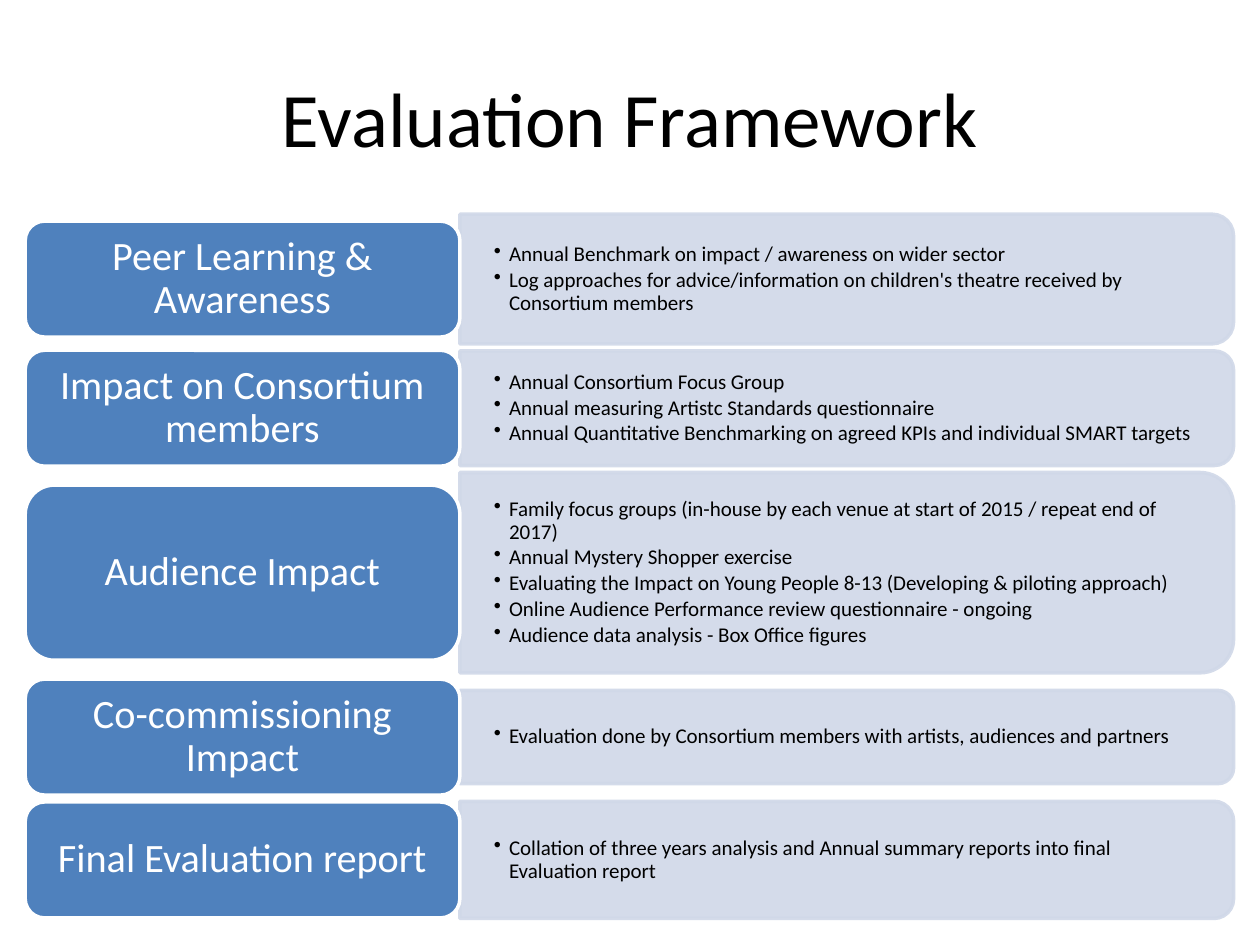
from dataclasses import dataclass

from lxml import etree
from pptx import Presentation
from pptx.dml.color import RGBColor
from pptx.enum.shapes import MSO_SHAPE
from pptx.enum.text import MSO_ANCHOR, PP_ALIGN
from pptx.oxml.ns import qn
from pptx.util import Emu, Pt

ROUND = MSO_SHAPE.ROUNDED_RECTANGLE
TAB = MSO_SHAPE.ROUND_2_SAME_RECTANGLE
CENTER, LEFT = PP_ALIGN.CENTER, PP_ALIGN.LEFT
MIDDLE = MSO_ANCHOR.MIDDLE
SCALE = 9144
INSET = 0.0488


@dataclass(frozen=True)
class Theme:
    """Colours, font and type sizes."""
    font: str = "Calibri"
    ink: str = "000000"
    white: str = "FFFFFF"
    blue: str = "4F81BD"
    pale: str = "D0D8E8"
    head: int = 44
    label: int = 23
    item: int = 12


def px(num):
    """Turn px into EMU."""
    return Emu(round(num * SCALE))


class Deck:
    """Holds the style and the current slide."""

    def __init__(self, theme):
        """Open a deck with one title slide."""
        self.theme = theme
        self.file = Presentation()
        self.file.slide_width, self.file.slide_height = px(1000), px(750)
        self.slide = self.file.slides.add_slide(self.file.slide_layouts[5])

    def style(self, frame, size, color, align):
        """Format all text in a frame."""
        frame.word_wrap = True
        frame.vertical_anchor = MIDDLE
        for par in frame.paragraphs:
            par.alignment = align
            for run in par.runs:
                run.font.name = self.theme.font
                run.font.size = Pt(size)
                run.font.color.rgb = RGBColor.from_string(color)

    def pad(self, frame, side, edge):
        """Set the inner margins of a frame."""
        frame.margin_left = frame.margin_right = px(side)
        frame.margin_top = frame.margin_bottom = px(edge)

    def title(self, text, box):
        """Fill and place the title."""
        shape = self.slide.shapes.title
        shape.left, shape.top, shape.width, shape.height = map(px, box)
        shape.text_frame.text = text
        self.style(shape.text_frame, self.theme.head, self.theme.ink, CENTER)

    def block(self, kind, box, fill, line):
        """Add a filled and outlined shape."""
        shape = self.slide.shapes.add_shape(kind, *map(px, box))
        shape.shadow.inherit = False
        shape.fill.solid()
        shape.fill.fore_color.rgb = RGBColor.from_string(fill)
        shape.line.color.rgb = RGBColor.from_string(line)
        shape.line.width = Pt(2)
        return shape

    def panel(self, left, mid, width, height):
        """Add a pale panel with rounded right corners."""
        box = (left + (width - height) / 2, mid - width / 2, height, width)
        pale = self.theme.pale
        shape = self.block(TAB, box, pale, pale)
        shape.rotation = 90
        for tint in shape._element.spPr.iter(qn("a:srgbClr")):
            etree.SubElement(tint, qn("a:alpha"), val="90000")

    def label(self, text, box):
        """Add a blue label."""
        shape = self.block(ROUND, box, self.theme.blue, self.theme.white)
        frame = shape.text_frame
        frame.text = text
        self.pad(frame, 10, 5)
        frame.paragraphs[0].line_spacing = 0.9
        self.style(frame, self.theme.label, self.theme.white, CENTER)

    def bullets(self, items, box):
        """Add a bulleted list."""
        frame = self.slide.shapes.add_textbox(*map(px, box)).text_frame
        frame.text = "\n".join(items)
        self.pad(frame, 27, 14)
        self.style(frame, self.theme.item, self.theme.ink, LEFT)
        for par in frame.paragraphs:
            par.level = 1
            par.line_spacing = 0.9
            par.space_after = Pt(1.8)
            props = par._p.get_or_add_pPr()
            props.set("marL", str(px(12)))
            props.set("indent", str(px(-12)))
            etree.SubElement(props, qn("a:buChar"), char="•")

    def row(self, text, items, mid, high, tall):
        """Add a label, its panel and its list around one middle line."""
        left, width = 365, 614
        self.panel(left, mid, width, tall)
        gap = INSET * tall
        inner = tall - 2 * gap
        self.bullets(items, (left, mid - inner / 2, width - gap, inner))
        self.label(text, (20, mid - high / 2, 345, high))


ROWS = [
    ("Peer Learning & Awareness", 92, 103, [
        "Annual Benchmark on impact / awareness on wider sector",
        "Log approaches for advice/information on children's theatre "
        "received by Consortium members"]),
    ("Impact on Consortium members", 92, 91, [
        "Annual Consortium Focus Group",
        "Annual measuring Artistc Standards questionnaire",
        "Annual Quantitative Benchmarking on agreed KPIs and individual "
        "SMART targets"]),
    ("Audience Impact", 139, 159, [
        "Family focus groups (in-house by each venue at start of 2015 / "
        "repeat end of 2017)",
        "Annual Mystery Shopper exercise",
        "Evaluating the Impact on Young People 8-13 "
        "(Developing & piloting approach)",
        "Online Audience Performance review questionnaire - ongoing",
        "Audience data analysis - Box Office figures"]),
    ("Co-commissioning Impact", 92, 74, [
        "Evaluation done by Consortium members with artists, audiences "
        "and partners"]),
    ("Final Evaluation report", 92, 93, [
        "Collation of three years analysis and Annual summary reports "
        "into final Evaluation report"]),
]


def main():
    """Build and save the slide."""
    deck = Deck(Theme())
    deck.title("Evaluation Framework", (50, 30, 900, 125))
    top, gap = 170, 5
    for text, high, tall, items in ROWS:
        span = max(high, tall)
        deck.row(text, items, top + span / 2, high, tall)
        top += span + gap
    deck.file.save("out.pptx")


if __name__ == "__main__":
    main()
